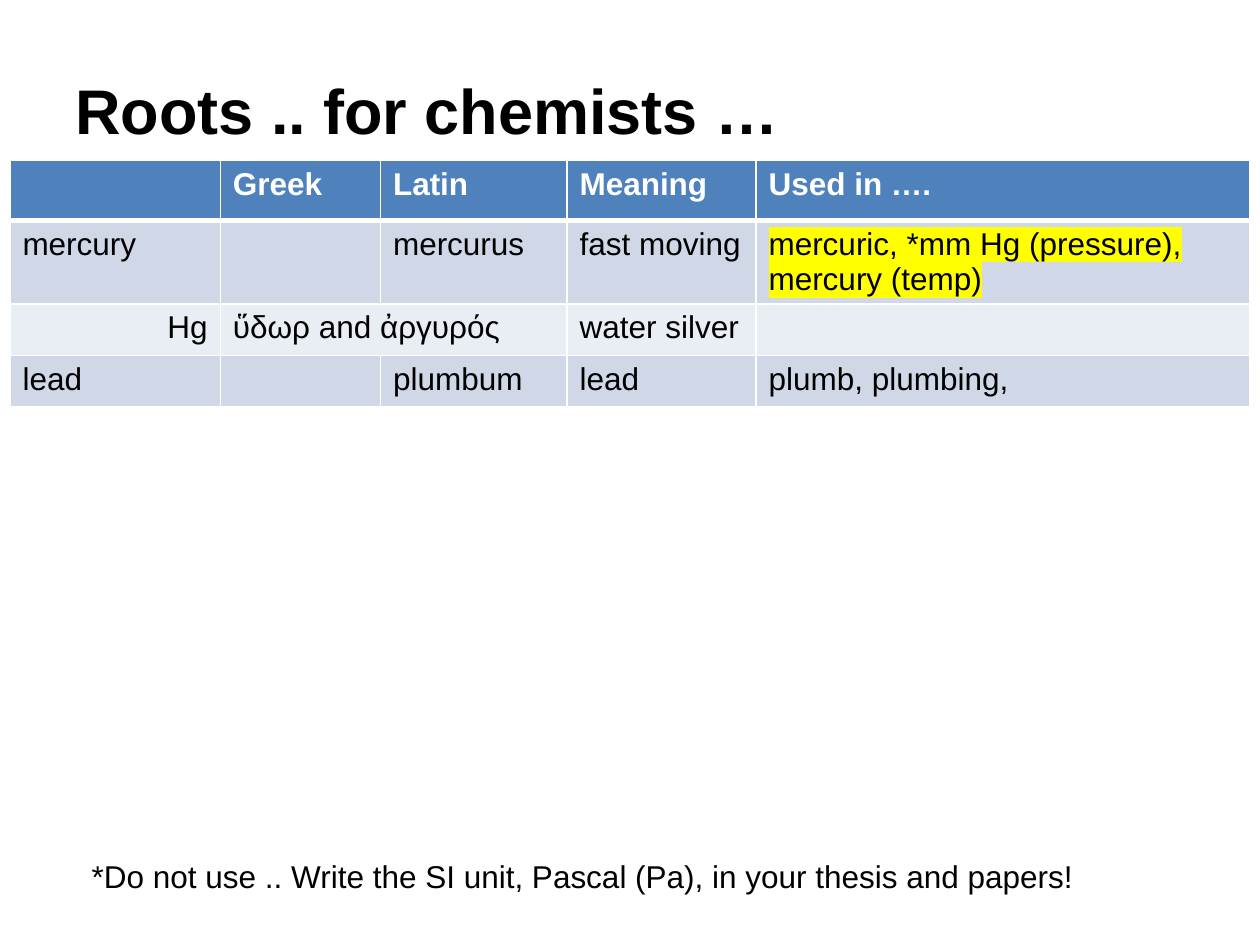
from lxml.etree import SubElement
from pptx import Presentation
from pptx.dml.color import RGBColor
from pptx.enum.text import MSO_ANCHOR as Anchor, MSO_AUTO_SIZE as AutoSize, PP_ALIGN as Align
from pptx.oxml import parse_xml
from pptx.oxml.ns import nsdecls, qn
from pptx.util import Cm, Pt

BLACK = RGBColor(0x00, 0x00, 0x00)
WHITE = RGBColor(0xFF, 0xFF, 0xFF)
YELLOW = RGBColor(0xFF, 0xFF, 0x00)
HEADER = RGBColor(0x4F, 0x81, 0xBD)
BANDS = RGBColor(0xD0, 0xD8, 0xE8), RGBColor(0xE9, 0xED, 0xF4)

COLUMNS = [4.24, 3.23, 3.76, 3.81, 9.96]
HEIGHTS = [1.22, 1.04, 1.04, 1.04]
ROOTS = [
    ["", "Greek", "Latin", "Meaning", "Used in …."],
    ["mercury", "", "mercurus", "fast moving", "mercuric, *mm Hg (pressure), mercury (temp)"],
    ["Hg", "ὕδωρ and ἀργυρός", "", "water silver", ""],
    ["lead", "", "plumbum", "lead", "plumb, plumbing,"],
]


class Deck:
    font = "Arial"
    size = 18

    def __init__(self, prs):
        self.slide = prs.slides.add_slide(prs.slide_layouts[6])

    def fill_paragraph(self, p, text, size=None, color=BLACK, bold=False):
        p.font.name = self.font
        p.font.size = Pt(size or self.size)
        p.font.color.rgb = color
        p.font.bold = bold
        if text:
            p.add_run().text = text

    def text(self, text, x, y, w, h, wrap=True, anchor=Anchor.TOP, **style):
        tf = self.slide.shapes.add_textbox(Cm(x), Cm(y), Cm(w), Cm(h)).text_frame
        tf.word_wrap = wrap
        tf.auto_size = AutoSize.NONE if wrap else AutoSize.SHAPE_TO_FIT_TEXT
        tf.vertical_anchor = anchor
        self.fill_paragraph(tf.paragraphs[0], text, **style)

    def table(self, rows, x, y, widths, heights):
        frame = self.slide.shapes.add_table(
            len(rows), len(widths), Cm(x), Cm(y), Cm(sum(widths)), Cm(sum(heights)))
        table = frame.table
        for column, width in zip(table.columns, widths):
            column.width = Cm(width)
        for i, (row, height) in enumerate(zip(rows, heights)):
            table.rows[i].height = Cm(height)
            for j, text in enumerate(row):
                self.cell(table.cell(i, j), text, i)
        return table

    def cell(self, cell, text, row):
        header = row == 0
        cell.fill.solid()
        cell.fill.fore_color.rgb = HEADER if header else BANDS[(row - 1) % 2]
        self.fill_paragraph(cell.text_frame.paragraphs[0], text,
                            color=WHITE if header else BLACK, bold=header)
        props = cell._tc.get_or_add_tcPr()
        for n, side in enumerate("LRTB"):
            thick = (header and side == "B") or (row == 1 and side == "T")
            props.insert(n, parse_xml(
                f'<a:ln{side} {nsdecls("a")} w="{Pt(3 if thick else 1)}"><a:solidFill>'
                f'<a:srgbClr val="{WHITE}"/></a:solidFill></a:ln{side}>'))

    def highlight(self, cell, color):
        r = cell.text_frame.paragraphs[0].runs[0]
        mark = SubElement(r._r.get_or_add_rPr(), qn("a:highlight"))
        SubElement(mark, qn("a:srgbClr"), val=str(color))


def main():
    prs = Presentation()
    prs.slide_width, prs.slide_height = Cm(25.4), Cm(19.05)
    deck = Deck(prs)
    deck.text("Roots .. for chemists …", 1.27, 0.61, 22.86, 3.18,
              anchor=Anchor.MIDDLE, size=36, bold=True)
    table = deck.table(ROOTS, 0.2, 3.23, COLUMNS, HEIGHTS)
    table.cell(2, 1).merge(table.cell(2, 2))
    table.cell(2, 0).text_frame.paragraphs[0].alignment = Align.RIGHT
    deck.highlight(table.cell(1, 4), YELLOW)
    deck.text("*Do not use .. Write the SI unit, Pascal (Pa), in your thesis and papers!",
              1.6, 17.15, 20.68, 1.02, wrap=False)
    prs.save("out.pptx")


if __name__ == "__main__":
    main()
